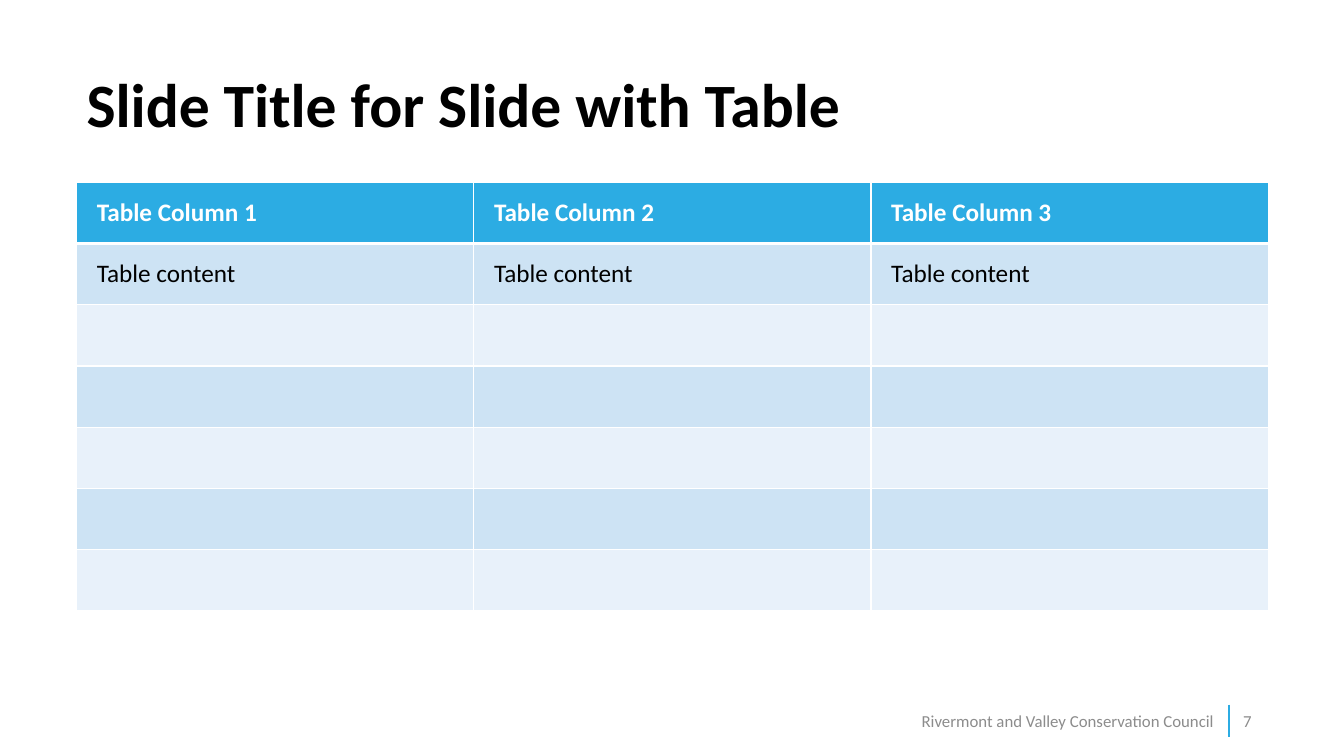
import pptx
import pptx.util
import pptx.dml.color
import pptx.enum.shapes
import pptx.enum.text
import pptx.oxml
import pptx.oxml.ns

Inches, Pt = pptx.util.Inches, pptx.util.Pt
RGB = pptx.dml.color.RGBColor
ALIGN = pptx.enum.text.PP_ALIGN
MIDDLE = pptx.enum.text.MSO_ANCHOR.MIDDLE

TITLE = "Slide Title for Slide with Table"
FOOTER = "Rivermont and Valley Conservation Council"
NUMBER = "7"
HEADS = ["Table Column 1", "Table Column 2", "Table Column 3"]
ROWS = [["Table content"] * 3] + [[""] * 3 for _ in range(5)]

BLUE = RGB(0x2C, 0xAC, 0xE3)
BANDS = [RGB(0xCD, 0xE3, 0xF4), RGB(0xE8, 0xF1, 0xFA)]
WHITE = RGB(0xFF, 0xFF, 0xFF)
BLACK = RGB(0, 0, 0)
GREY = RGB(0x8C, 0x8C, 0x8C)

LEFT, WIDTH = 0.76, 11.82
TOP, HEIGHT = 1.81, 4.25
FOOT_TOP, FOOT_HIGH = 6.95, 0.4


def write(frame, text, size=18, color=BLACK, bold=False, align=ALIGN.LEFT, space=1.0):
    frame.word_wrap = True
    para = frame.paragraphs[0]
    para.alignment = align
    para.line_spacing = space
    para.font.size = Pt(size)
    if text:
        run = para.add_run()
        run.text = text
        run.font.name = "Calibri"
        run.font.size = Pt(size)
        run.font.bold = bold
        run.font.color.rgb = color


def label(slide, text, box, **style):
    frame = slide.shapes.add_textbox(*map(Inches, box)).text_frame
    frame.vertical_anchor = MIDDLE
    write(frame, text, **style)


def border(cell, widths):
    props = cell._tc.get_or_add_tcPr()
    for spot, (side, width) in enumerate(zip("LRTB", widths)):
        props.insert(spot, pptx.oxml.parse_xml(
            f'<a:ln{side} {pptx.oxml.ns.nsdecls("a")} w="{Pt(width)}">'
            f'<a:solidFill><a:srgbClr val="{WHITE}"/></a:solidFill></a:ln{side}>'))


def fill_table(slide):
    grid = [HEADS] + ROWS
    box = map(Inches, (LEFT, TOP, WIDTH, HEIGHT))
    table = slide.shapes.add_table(len(grid), len(HEADS), *box).table
    for row, texts in enumerate(grid):
        head = row == 0
        table.rows[row].height = Inches(HEIGHT / len(grid))
        for col, text in enumerate(texts):
            cell = table.cell(row, col)
            cell.vertical_anchor = MIDDLE
            cell.margin_left = cell.margin_right = Inches(0.2)
            cell.margin_top = cell.margin_bottom = Inches(0.08)
            cell.fill.solid()
            cell.fill.fore_color.rgb = BLUE if head else BANDS[(row - 1) % 2]
            border(cell, (1, 1, 3 if row == 1 else 1, 3 if head else 1))
            write(cell.text_frame, text, color=WHITE if head else BLACK, bold=head)


def rule(slide, x, top, end):
    line = slide.shapes.add_connector(
        pptx.enum.shapes.MSO_CONNECTOR.STRAIGHT, *map(Inches, (x, top, x, end)))
    line.line.color.rgb = BLUE
    line.line.width = Pt(1)
    props = line._element.spPr
    props.append(pptx.oxml.parse_xml(f'<a:effectLst {pptx.oxml.ns.nsdecls("a")}/>'))


def main():
    deck = pptx.Presentation()
    deck.slide_width, deck.slide_height = Inches(13.33), Inches(7.5)
    slide = deck.slides.add_slide(deck.slide_layouts[6])
    rule(slide, 12.19, 6.99, 7.31)
    label(slide, FOOTER, (8.86, FOOT_TOP, 3.28, FOOT_HIGH),
          size=12, color=GREY, align=ALIGN.RIGHT)
    label(slide, NUMBER, (12.23, FOOT_TOP, 0.58, FOOT_HIGH), size=12, color=GREY)
    label(slide, TITLE, (LEFT, 0.44, WIDTH, 1.26), size=44, bold=True, space=0.9)
    fill_table(slide)
    deck.save("out.pptx")


if __name__ == "__main__":
    main()
